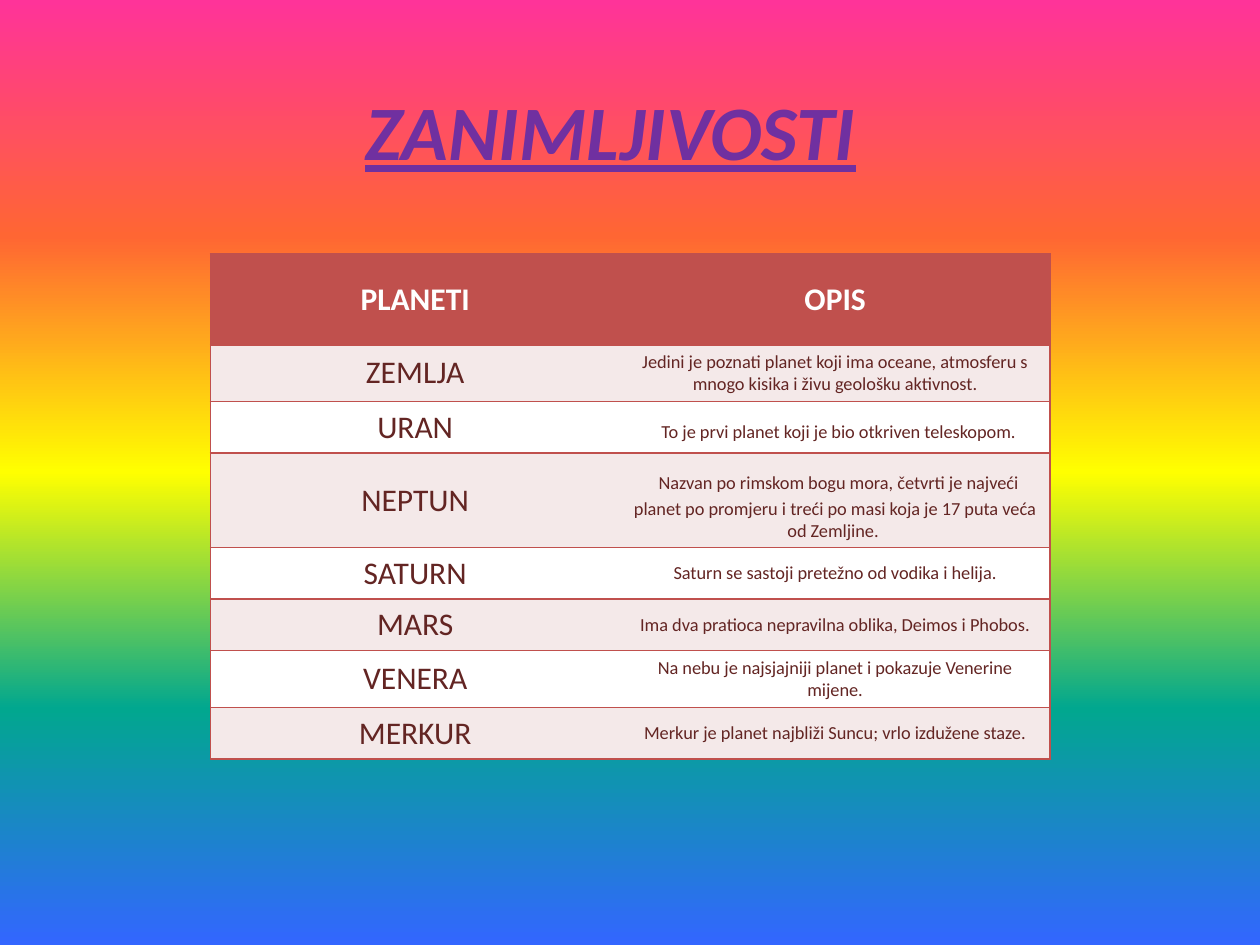
import dataclasses

import lxml.etree
import pptx
import pptx.dml.color
import pptx.enum.text
import pptx.oxml
import pptx.oxml.ns
import pptx.util

Cm = pptx.util.Cm
Pt = pptx.util.Pt
qn = pptx.oxml.ns.qn


@dataclasses.dataclass(frozen=True)
class Theme:
    font: str = "Calibri"
    title_color: str = "7030A0"
    accent: str = "C0504D"
    header_text: str = "FFFFFF"
    body_text: str = "632523"
    bands: tuple = ("F4E9E9", "FFFFFF")
    rainbow: tuple = ("FF3399", "FF6633", "FFFF00", "01A78F", "3366FF")
    title_size: float = 44
    name_size: float = 18
    description_size: float = 10.5
    border_width: float = 1


THEME = Theme()
PLAIN_TABLE_STYLE = "{2D5ABB26-0587-4C30-8999-92F81FD0307C}"
TALL_SPACE = " "
HEADINGS = ("PLANETI", "OPIS")
PLANETS = (
    ("ZEMLJA", "Jedini je poznati planet koji ima oceane, atmosferu s mnogo kisika i živu geološku aktivnost."),
    ("URAN", " To je prvi planet koji je bio otkriven teleskopom."),
    ("NEPTUN", " Nazvan po rimskom bogu mora, četvrti je najveći planet po promjeru i treći po masi koja je 17 puta veća od Zemljine. "),
    ("SATURN", "Saturn se sastoji pretežno od vodika i helija."),
    ("MARS", "Ima dva pratioca nepravilna oblika, Deimos i Phobos."),
    ("VENERA", "Na nebu je najsjajniji planet i pokazuje Venerine mijene."),
    ("MERKUR", "Merkur je planet najbliži Suncu; vrlo izdužene staze."),
)


def rgb(color):
    return pptx.dml.color.RGBColor.from_string(color)


def set_font(font, size, color, bold=False):
    font.name = THEME.font
    font.size = Pt(size)
    font.color.rgb = rgb(color)
    font.bold = bold


def paint_background(slide):
    fill = slide.background.fill
    fill.gradient()
    fill.gradient_angle = 270
    stops = next(slide.element.iter(qn("a:gsLst")))
    for stop in list(stops):
        stops.remove(stop)
    step = 100000 // (len(THEME.rainbow) - 1)
    for index, color in enumerate(THEME.rainbow):
        stop = lxml.etree.SubElement(stops, qn("a:gs"), pos=str(index * step))
        lxml.etree.SubElement(stop, qn("a:srgbClr"), val=color)


def place_title(slide, text, left, top, width, height):
    title = slide.shapes.title
    title.left, title.top, title.width, title.height = left, top, width, height
    frame = title.text_frame
    frame.text = text
    frame.word_wrap = True
    frame.auto_size = pptx.enum.text.MSO_AUTO_SIZE.SHAPE_TO_FIT_TEXT
    frame.vertical_anchor = pptx.enum.text.MSO_ANCHOR.MIDDLE
    paragraph = frame.paragraphs[0]
    paragraph.alignment = pptx.enum.text.PP_ALIGN.LEFT
    set_font(paragraph.font, THEME.title_size, THEME.title_color, bold=True)
    paragraph.font.italic = True
    paragraph.font.underline = True


def add_borders(cell, sides):
    properties = cell._tc.get_or_add_tcPr()
    for side in sides:
        line = lxml.etree.SubElement(
            properties, qn(f"a:ln{side}"), w=str(Pt(THEME.border_width)))
        fill = lxml.etree.SubElement(line, qn("a:solidFill"))
        lxml.etree.SubElement(fill, qn("a:srgbClr"), val=THEME.accent)


def fill_cell(cell, text, size, color, background, sides, bold=False):
    add_borders(cell, sides)
    cell.fill.solid()
    cell.fill.fore_color.rgb = rgb(background)
    cell.vertical_anchor = pptx.enum.text.MSO_ANCHOR.MIDDLE
    paragraph = cell.text_frame.paragraphs[0]
    paragraph.alignment = pptx.enum.text.PP_ALIGN.CENTER
    set_font(paragraph.font, size, color, bold)
    if text.startswith(TALL_SPACE):
        spacer = paragraph.add_run()
        spacer.text = TALL_SPACE
        spacer.font.size = Pt(THEME.name_size)
        text = text[len(TALL_SPACE):]
    run = paragraph.add_run()
    run.text = text
    run.font.size = Pt(size)


def place_planet_table(slide, left, top, width, height):
    rows = (HEADINGS,) + PLANETS
    table = slide.shapes.add_table(len(rows), len(HEADINGS), left, top, width, height).table
    next(table._tbl.iter(qn("a:tableStyleId"))).text = PLAIN_TABLE_STYLE
    name_width = Cm(8.26)
    table.columns[0].width = name_width
    table.columns[1].width = width - name_width
    header_height = Cm(1.83)
    row_height = (height - header_height) // len(PLANETS)
    for row_index, texts in enumerate(rows):
        header = row_index == 0
        table.rows[row_index].height = header_height if header else row_height
        for column, text in enumerate(texts):
            small = column == 1 and not header
            fill_cell(
                table.cell(row_index, column), text,
                size=THEME.description_size if small else THEME.name_size,
                color=THEME.header_text if header else THEME.body_text,
                background=THEME.accent if header else THEME.bands[(row_index - 1) % 2],
                sides=("LTB", "RTB")[column],
                bold=header)


def main():
    presentation = pptx.Presentation()
    presentation.slide_width = Cm(25.4)
    presentation.slide_height = Cm(19.05)
    slide = presentation.slides.add_slide(presentation.slide_layouts.get_by_name("Title Only"))
    paint_background(slide)
    place_planet_table(slide, Cm(4.24), Cm(5.12), Cm(16.93), Cm(9.11))
    place_title(slide, "ZANIMLJIVOSTI", Cm(7.11), Cm(1.55), Cm(11.2), Cm(2.13))
    presentation.save("out.pptx")


if __name__ == "__main__":
    main()
